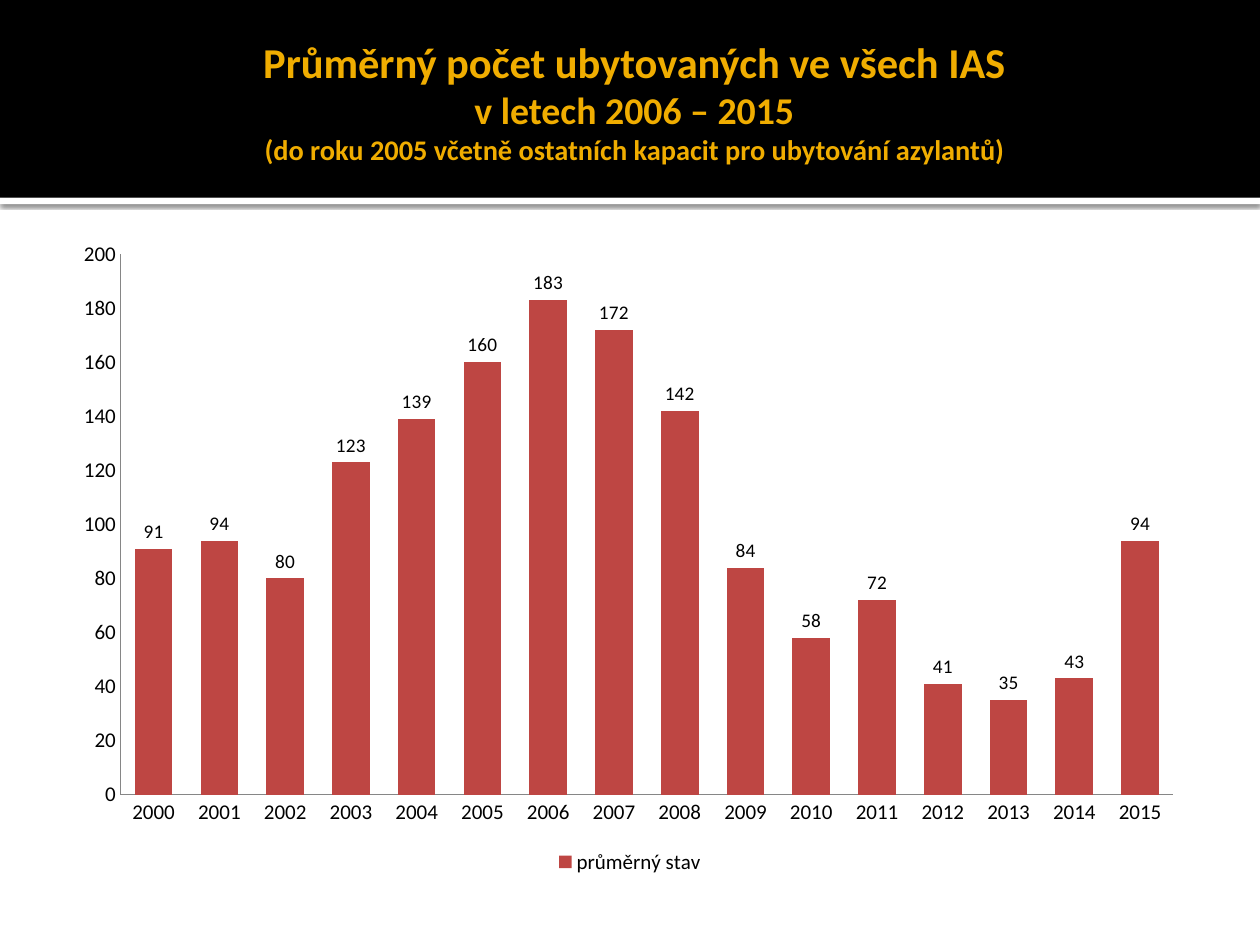
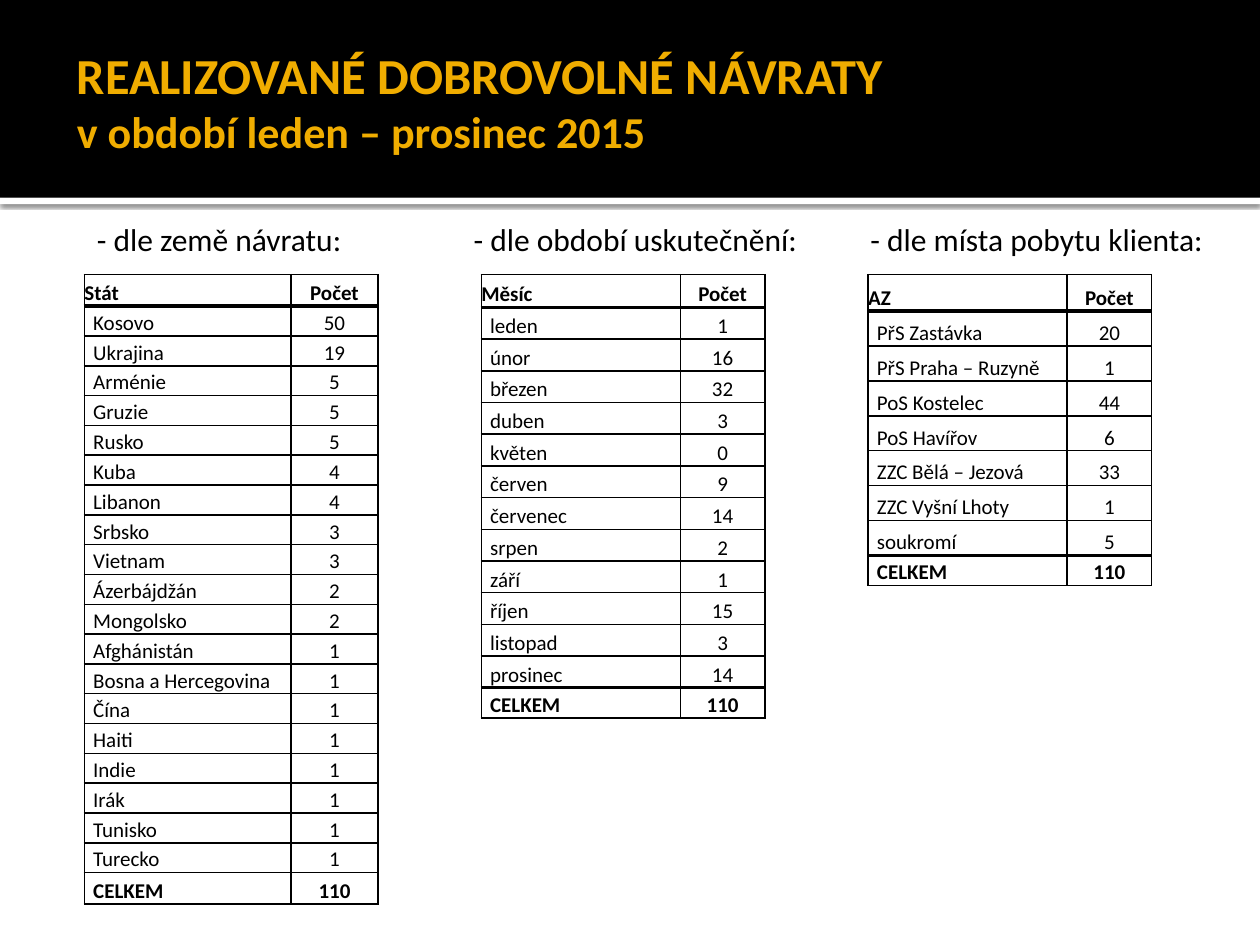
"""Build two slides on accommodated asylum holders and voluntary returns."""
from copy import deepcopy
from dataclasses import dataclass
from typing import Any

from lxml.etree import SubElement
from pptx import Presentation
from pptx.chart.data import CategoryChartData
from pptx.dml.color import RGBColor
from pptx.enum.chart import XL_CHART_TYPE as ChartType
from pptx.enum.chart import XL_LABEL_POSITION as LabelPos
from pptx.enum.chart import XL_LEGEND_POSITION as LegendPos
from pptx.enum.chart import XL_TICK_MARK as Tick
from pptx.enum.shapes import MSO_SHAPE as Shape
from pptx.enum.text import MSO_ANCHOR as Anchor
from pptx.enum.text import MSO_AUTO_SIZE as AutoSize
from pptx.enum.text import PP_ALIGN as Align
from pptx.oxml import parse_xml
from pptx.oxml.ns import nsdecls, qn
from pptx.util import Inches, Pt

FONT = "Calibri"
BLACK = RGBColor(0x00, 0x00, 0x00)
WHITE = RGBColor(0xFF, 0xFF, 0xFF)
GOLD = RGBColor(0xF0, 0xAD, 0x00)
RED = RGBColor(0xBE, 0x46, 0x43)
GREY = RGBColor(0x86, 0x86, 0x86)

THIN, THICK = Pt(1), Pt(2.25)
TABLE_TOP = 2.18
CAPTION_TOP = 1.7
ROW_INDENT = Inches(0.07)


@dataclass(frozen=True)
class Band:
    """A full-width strip behind the title."""
    top: float
    height: float
    color: RGBColor
    shadow: bool = False


@dataclass(frozen=True)
class TitleLine:
    """One line of a title with its size in points."""
    text: str
    size: float


@dataclass(frozen=True)
class CountTable:
    """A captioned table of counts that ends with a total."""
    caption: str
    caption_left: float
    caption_width: float
    left: float
    cols: tuple[float, float]
    height: float
    head_height: float
    total_height: float
    head: str
    counts: dict[str, int]
    thick_total: bool = True
    wrap: bool = True


BANDS = (Band(0, 1.57, BLACK), Band(1.57, 0.05, WHITE, shadow=True))

RESIDENTS_TITLE = (
    TitleLine("Průměrný počet ubytovaných ve všech IAS", 24.3),
    TitleLine("v letech 2006 – 2015", 21.6),
    TitleLine("(do roku 2005 včetně ostatních kapacit pro ubytování azylantů)", 16.2),
)
RETURNS_TITLE = (
    TitleLine("REALIZOVANÉ DOBROVOLNÉ NÁVRATY", 28.8),
    TitleLine("v období leden – prosinec 2015", 25.2),
)
RESIDENTS = (91, 94, 80, 123, 139, 160, 183, 172,
             142, 84, 58, 72, 41, 35, 43, 94)
FIRST_YEAR = 2000

TABLES = (
    CountTable(
        "- dle země návratu:", 0.67, 2.44, 0.67, (1.64, 0.69), 5, 0.25, 0.25, "Stát",
        {"Kosovo": 50, "Ukrajina": 19, "Arménie": 5, "Gruzie": 5, "Rusko": 5,
         "Kuba": 4, "Libanon": 4, "Srbsko": 3, "Vietnam": 3, "Ázerbájdžán": 2,
         "Mongolsko": 2, "Afghánistán": 1, "Bosna a Hercegovina": 1, "Čína": 1,
         "Haiti": 1, "Indie": 1, "Irák": 1, "Tunisko": 1, "Turecko": 1},
        thick_total=False),
    CountTable(
        "- dle období uskutečnění:", 3.66, 2.99, 3.82, (1.58, 0.67), 3.52, 0.26, 0.24,
        "Měsíc",
        {"leden": 1, "únor": 16, "březen": 32, "duben": 3, "květen": 0, "červen": 9,
         "červenec": 14, "srpen": 2, "září": 1, "říjen": 15, "listopad": 3,
         "prosinec": 14}),
    CountTable(
        "- dle místa pobytu klienta:", 6.81, 2.87, 6.89, (1.58, 0.67), 2.47, 0.29, 0.24,
        "AZ",
        {"PřS Zastávka": 20, "PřS Praha – Ruzyně": 1, "PoS Kostelec": 44,
         "PoS Havířov": 6, "ZZC Bělá – Jezová": 33, "ZZC Vyšní Lhoty": 1,
         "soukromí": 5},
        wrap=False),
)


def apply(obj: Any, **values: Any) -> None:
    """Set each named attribute on an object."""
    for name, value in values.items():
        setattr(obj, name, value)


def style_font(font: Any, size: float, color: RGBColor = BLACK, bold: bool = False) -> None:
    """Give a font the shared typeface and its own size, colour and weight."""
    apply(font, name=FONT, size=Pt(size), bold=bold)
    font.color.rgb = color


def add_band(slide: Any, band: Band, depth: int) -> None:
    """Draw a strip at the given depth behind the title."""
    sp = slide.shapes.add_shape(Shape.RECTANGLE, 0, Inches(band.top),
                                Inches(10), Inches(band.height))
    sp.shadow.inherit = False
    sp.fill.solid()
    sp.fill.fore_color.rgb = band.color
    sp.line.fill.background()
    if band.shadow:
        effects = sp.element.spPr.find(qn("a:effectLst"))
        effects.append(parse_xml(
            f'<a:outerShdw {nsdecls("a")} blurRad="{Pt(2.5)}" dist="{Pt(0.8)}" '
            'dir="5400000" algn="t" rotWithShape="0"><a:srgbClr val="000000">'
            '<a:alpha val="60000"/></a:srgbClr></a:outerShdw>'))
    sp.element.getparent().insert(depth, sp.element)


def add_titled_slide(prs: Any, lines: tuple[TitleLine, ...], align: Align) -> Any:
    """Add a slide with the shared bands and a formatted title."""
    slide = prs.slides.add_slide(prs.slide_layouts[5])
    for band in BANDS:
        add_band(slide, band, 2)
    title = slide.shapes.title
    apply(title, left=Inches(0.51), top=Inches(0.29), width=Inches(9), height=Inches(1.02))
    tf = title.text_frame
    apply(tf, word_wrap=True, auto_size=AutoSize.NONE, vertical_anchor=Anchor.MIDDLE,
          margin_left=Inches(0.1), margin_right=Inches(0.05),
          margin_top=Inches(0.05), margin_bottom=Inches(0.05))
    p = tf.paragraphs[0]
    p.alignment = align
    for line in lines:
        r = p.add_run()
        r.text = line.text
        style_font(r.font, line.size, GOLD, bold=True)
        if line is not lines[-1]:
            p.add_line_break()
            p._p[-1].append(deepcopy(r._r.rPr))
    return slide


def place_plot(chart: Any, **fractions: float) -> None:
    """Fix the inner plot area as fractions of the chart."""
    area = chart._chartSpace.chart.plotArea
    for old in area.findall(qn("c:layout")):
        area.remove(old)
    layout = parse_xml(f'<c:layout {nsdecls("c")}><c:manualLayout/></c:layout>')
    settings = {"layoutTarget": "inner", "xMode": "edge", "yMode": "edge", **fractions}
    for tag, value in settings.items():
        SubElement(layout[0], qn(f"c:{tag}")).set("val", str(value))
    area.insert(0, layout)


def add_residents_chart(slide: Any) -> None:
    """Draw the yearly average as columns."""
    data = CategoryChartData(number_format="#,##0")
    data.categories = [str(FIRST_YEAR + i) for i in range(len(RESIDENTS))]
    data.add_series("průměrný stav", RESIDENTS)
    chart = slide.shapes.add_chart(ChartType.COLUMN_CLUSTERED, Inches(0.51), Inches(1.81),
                                   Inches(8.98), Inches(5.17), data).chart
    apply(chart, has_title=False, has_legend=True)
    style_font(chart.font, 10)
    apply(chart.legend, position=LegendPos.BOTTOM, include_in_layout=False)
    style_font(chart.legend.font, 12)
    for axis in (chart.category_axis, chart.value_axis):
        apply(axis, major_tick_mark=Tick.NONE, minor_tick_mark=Tick.NONE,
              has_major_gridlines=False)
        style_font(axis.tick_labels.font, 12)
        axis.format.line.color.rgb = GREY
        axis.format.line.width = Pt(0.75)
    apply(chart.value_axis, minimum_scale=0, maximum_scale=200, major_unit=20)
    apply(chart.value_axis.tick_labels, number_format="#,##0", number_format_is_linked=False)
    plot = chart.plots[0]
    apply(plot, gap_width=75, overlap=100, vary_by_categories=False, has_data_labels=True)
    apply(plot.data_labels, show_value=True, position=LabelPos.OUTSIDE_END)
    style_font(plot.data_labels.font, 11)
    fill = plot.series[0].format.fill
    fill.solid()
    fill.fore_color.rgb = RED
    place_plot(chart, x=0.05, y=0.04, w=0.93, h=0.83)


def set_borders(cell: Any, top: int, bottom: int) -> None:
    """Line a cell in black with the given top and bottom widths."""
    widths = {"L": THIN, "R": THIN, "T": top, "B": bottom}
    for side, width in widths.items():
        cell._tc.get_or_add_tcPr().append(parse_xml(
            f'<a:ln{side} {nsdecls("a")} w="{width}"><a:solidFill>'
            f'<a:srgbClr val="{BLACK}"/></a:solidFill></a:ln{side}>'))


def add_caption(slide: Any, spec_table: CountTable) -> None:
    """Write the caption above a table."""
    sp = slide.shapes.add_textbox(Inches(spec_table.caption_left), Inches(CAPTION_TOP),
                                  Inches(spec_table.caption_width), Inches(0.4))
    tf = sp.text_frame
    apply(tf, word_wrap=spec_table.wrap, auto_size=AutoSize.SHAPE_TO_FIT_TEXT)
    r = tf.paragraphs[0].add_run()
    r.text = spec_table.caption
    style_font(r.font, 18)


def add_count_table(slide: Any, ct: CountTable) -> None:
    """Draw a table with a heading, its counts and their total."""
    rows = [(ct.head, "Počet"), *ct.counts.items(), ("CELKEM", sum(ct.counts.values()))]
    last = len(rows) - 1
    body_height = (ct.height - ct.head_height - ct.total_height) / len(ct.counts)
    heights = [ct.head_height, *[body_height] * len(ct.counts), ct.total_height]
    thick_edges = {1, last} if ct.thick_total else {1}
    table = slide.shapes.add_table(len(rows), 2, Inches(ct.left), Inches(TABLE_TOP),
                                   Inches(sum(ct.cols)), Inches(ct.height)).table
    apply(table, first_row=False, horz_banding=False)
    for col, width in zip(table.columns, ct.cols):
        col.width = Inches(width)
    for i, values in enumerate(rows):
        table.rows[i].height = Inches(heights[i])
        top, bottom = (THICK if edge in thick_edges else THIN for edge in (i, i + 1))
        for j, value in enumerate(values):
            cell = table.cell(i, j)
            set_borders(cell, top, bottom)
            cell.fill.background()
            apply(cell, vertical_anchor=Anchor.BOTTOM, margin_right=0, margin_top=0,
                  margin_bottom=0, margin_left=ROW_INDENT if i and not j else 0)
            p = cell.text_frame.paragraphs[0]
            p.alignment = Align.CENTER if j else Align.LEFT
            r = p.add_run()
            r.text = str(value)
            style_font(r.font, 12, bold=i in (0, last))


def main() -> None:
    """Build and save the presentation."""
    prs = Presentation()
    apply(prs, slide_width=Inches(10), slide_height=Inches(7.5))
    add_residents_chart(add_titled_slide(prs, RESIDENTS_TITLE, Align.CENTER))
    slide = add_titled_slide(prs, RETURNS_TITLE, Align.LEFT)
    for ct in TABLES:
        add_caption(slide, ct)
        add_count_table(slide, ct)
    prs.save("out.pptx")


if __name__ == "__main__":
    main()
